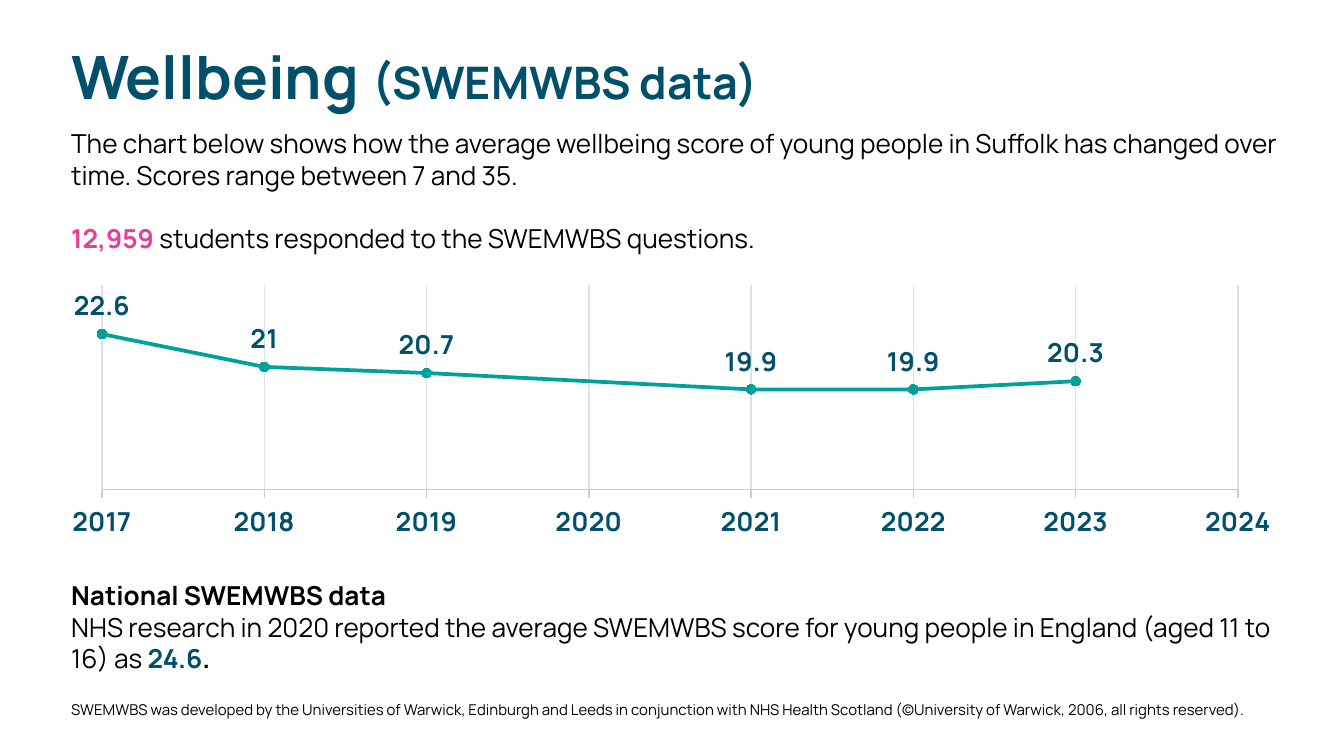
from lxml import etree
from pptx import Presentation
from pptx.chart.data import XyChartData
from pptx.chart.datalabel import DataLabels
from pptx.dml.color import RGBColor
from pptx.enum.chart import (XL_CHART_TYPE, XL_LABEL_POSITION, XL_MARKER_STYLE,
                             XL_TICK_MARK)
from pptx.oxml.ns import qn
from pptx.util import Emu, Pt

SMOOTH_SCATTER = XL_CHART_TYPE.XY_SCATTER_SMOOTH
ABOVE = XL_LABEL_POSITION.ABOVE
CIRCLE = XL_MARKER_STYLE.CIRCLE
TICK_OUTSIDE, TICK_NONE = XL_TICK_MARK.OUTSIDE, XL_TICK_MARK.NONE

EMU_PER_PX = 914400 / 134.4
FONT = "Manrope"
COLORS = {
    "black": "000000",
    "navy": "004F6B",
    "pink": "E73E97",
    "teal": "00A19B",
    "axis": "C9CCD8",
    "grid": "DFE1E8",
}
SCORES = {2017: 22.6, 2018: 21, 2019: 20.7, 2021: 19.9, 2022: 19.9, 2023: 20.3}


def px(length):
    return Emu(round(length * EMU_PER_PX))


def rgb(name):
    return RGBColor.from_string(COLORS[name])


def set_font(font, size=14, color="black", bold=False):
    font.name, font.size, font.bold = FONT, Pt(size), bold
    font.color.rgb = rgb(color)


def set_line(line, color, width):
    line.color.rgb = rgb(color)
    line.width = Pt(width)


def add_text(paragraph, text, **style):
    run = paragraph.add_run()
    run.text = text
    set_font(run.font, **style)


class SlideBuilder:
    def __init__(self, slide):
        self.slide = slide

    def text_box(self, box, *paragraphs):
        """Each paragraph is (space before in points, [(text, style), ...])."""
        frame = self.slide.shapes.add_textbox(*map(px, box)).text_frame
        frame.word_wrap = True
        for index, (space, runs) in enumerate(paragraphs):
            paragraph = frame.add_paragraph() if index else frame.paragraphs[0]
            if space:
                paragraph.space_before = Pt(space)
            for text, style in runs:
                add_text(paragraph, text, **style)

    def score_chart(self, box, plot_box, scores):
        data = XyChartData()
        points = data.add_series("Series 1")
        for year, score in scores.items():
            points.add_data_point(year, score)
        chart = self.slide.shapes.add_chart(
            SMOOTH_SCATTER, *map(px, box), data).chart
        chart.has_legend = chart.has_title = False
        set_font(chart.font)
        chart.plots[0].vary_by_categories = False
        self.style_axes(chart)
        self.style_series(chart.plots[0].series[0])
        self.place_plot(chart, box, plot_box)

    def style_axes(self, chart):
        years, values = chart.category_axis, chart.value_axis
        years.minimum_scale, years.maximum_scale = 2017, 2024
        years.major_unit = 1
        years.has_major_gridlines = True
        years.major_tick_mark, years.minor_tick_mark = TICK_OUTSIDE, TICK_NONE
        years.tick_labels.number_format = "General"
        years.tick_labels.number_format_is_linked = False
        set_font(years.tick_labels.font, color="navy", bold=True)
        set_line(years.format.line, "axis", 0.75)
        set_line(years.major_gridlines.format.line, "grid", 0.75)
        values.minimum_scale, values.maximum_scale = 15, 25
        values.has_major_gridlines = False
        values.visible = False

    def style_series(self, series):
        set_line(series.format.line, "teal", 2)
        series.marker.style, series.marker.size = CIRCLE, 5
        series.marker.format.fill.solid()
        series.marker.format.fill.fore_color.rgb = rgb("teal")
        set_line(series.marker.format.line, "teal", 0.75)
        labels = DataLabels(series._element.get_or_add_dLbls())
        labels.show_value = True
        labels.position = ABOVE
        labels.number_format = "General"
        labels.number_format_is_linked = False
        set_font(labels.font, color="navy", bold=True)

    def place_plot(self, chart, box, plot_box):
        """Fix the inner plot area, given in slide px, inside the chart."""
        area = chart._chartSpace.chart.plotArea
        for old in area.findall(qn("c:layout")):
            area.remove(old)
        layout = etree.Element(qn("c:layout"))
        area.insert(0, layout)
        manual = etree.SubElement(layout, qn("c:manualLayout"))
        left, top, width, height = box
        plot_left, plot_top, plot_width, plot_height = plot_box
        settings = {
            "layoutTarget": "inner", "xMode": "edge", "yMode": "edge",
            "x": (plot_left - left) / width, "y": (plot_top - top) / height,
            "w": plot_width / width, "h": plot_height / height,
        }
        for tag, value in settings.items():
            etree.SubElement(manual, qn(f"c:{tag}")).set("val", str(value))


def main():
    deck = Presentation()
    deck.slide_width, deck.slide_height = px(1344), px(756)
    page = SlideBuilder(deck.slides.add_slide(deck.slide_layouts[6]))
    heading = {"color": "navy", "bold": True}

    page.text_box((58, 26, 1097, 108), (0, [
        ("Wellbeing", {"size": 32, **heading}),
        (" ", {"size": 36, **heading}),
        ("(SWEMWBS data)", {"size": 24, **heading})]))

    page.text_box(
        (58, 573, 1238, 190),
        (0, [("National SWEMWBS data", {"bold": True})]),
        (0, [("NHS research in 2020 reported the average SWEMWBS score for "
              "young people in England (aged 11 to 16) as ", {}),
             ("24.6", heading),
             (".", {"bold": True})]),
        (14.4, [("SWEMWBS was developed by the Universities of Warwick, "
                 "Edinburgh and Leeds in conjunction with NHS Health Scotland "
                 "(©University of Warwick, 2006, all rights reserved).",
                 {"size": 8})]))

    page.text_box(
        (58, 121, 1273, 172),
        (0, [("The chart below shows how the average wellbeing score of young "
              "people in Suffolk has changed over time. Scores range between "
              "7 and 35.", {})]),
        (17, [("12,959 ", {"color": "pink", "bold": True}),
              ("students responded to the SWEMWBS questions.", {})]))

    page.score_chart((48, 280, 1249, 266), (102, 285, 1136, 205), SCORES)
    deck.save("out.pptx")


if __name__ == "__main__":
    main()
